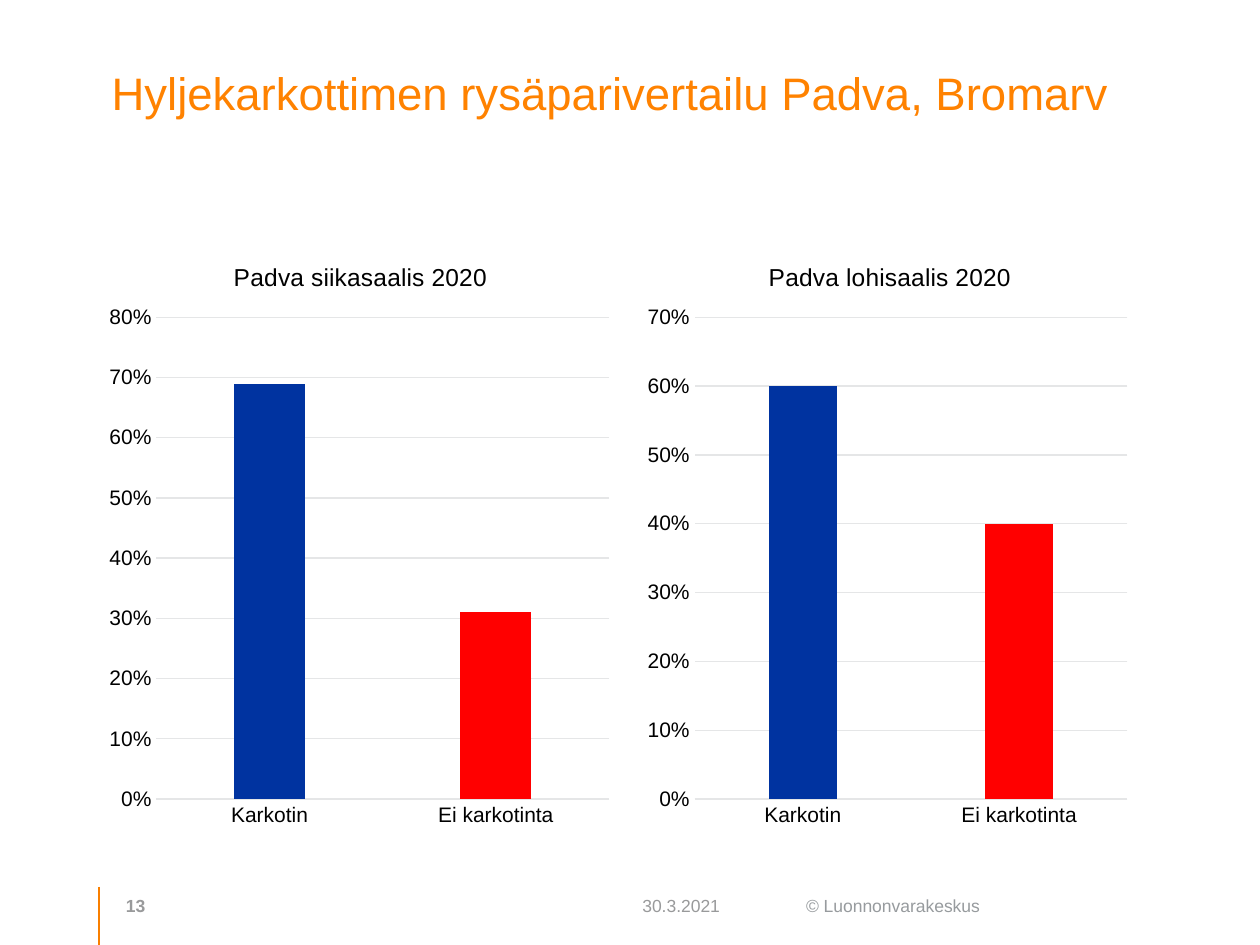
"""Build a slide with two column charts comparing catches with and without a seal deterrent."""
from dataclasses import dataclass

from lxml.etree import SubElement
from pptx import Presentation
from pptx.chart.data import CategoryChartData
from pptx.dml.color import RGBColor
from pptx.enum.chart import XL_CHART_TYPE, XL_TICK_MARK
from pptx.enum.shapes import MSO_CONNECTOR
from pptx.enum.text import MSO_ANCHOR
from pptx.oxml import parse_xml
from pptx.oxml.ns import nsdecls, qn
from pptx.slide import Slide
from pptx.util import Cm, Pt


@dataclass(frozen=True)
class Theme:
    font: str = "Arial"
    orange: str = "FF8200"
    rule: str = "F97F00"
    black: str = "000000"
    gray: str = "999A9B"
    mark: str = "979B9E"
    grid: str = "E5E6E7"
    bars: tuple[str, ...] = ("0033A0", "FF0000")
    head: int = 26
    title: int = 14
    label: int = 12
    foot: int = 10


@dataclass(frozen=True)
class Panel:
    title: str
    left: float
    width: float
    top: float
    shares: tuple[float, ...]


THEME = Theme()
GROUPS = ("Karkotin", "Ei karkotinta")
PANELS = (
    Panel("Padva siikasaalis 2020", 2, 10.49, 0.8, (0.69, 0.31)),
    Panel("Padva lohisaalis 2020", 12.9, 10.03, 0.7, (0.6, 0.4)),
)


def style(font, size: int, color: str, bold: bool = False) -> None:
    font.name, font.size, font.bold = THEME.font, Pt(size), bold
    font.color.rgb = RGBColor.from_string(color)


def write(slide: Slide, text: str, *, box: tuple[float, ...], size: int, color: str,
          bold: bool = False, anchor=MSO_ANCHOR.TOP) -> None:
    frame = slide.shapes.add_textbox(*map(Cm, box)).text_frame
    frame.word_wrap = True
    frame.vertical_anchor = anchor
    run = frame.paragraphs[0].add_run()
    run.text = text
    style(run.font, size, color, bold)


def place(owner, **parts: float) -> None:
    modes = "".join(f'<c:{k}Mode val="edge"/>' for k in "xy")
    sizes = "".join(f'<c:{k} val="{v}"/>' for k, v in parts.items())
    target = '<c:layoutTarget val="inner"/>' if "w" in parts else ""
    layout = parse_xml(f'<c:layout {nsdecls("c")}><c:manualLayout>{target}{modes}{sizes}'
                       '</c:manualLayout></c:layout>')
    for old in owner.findall(qn("c:layout")):
        owner.remove(old)
    text = owner.find(qn("c:tx"))
    owner.insert(0 if text is None else 1, layout)


def stroke(line) -> None:
    line.color.rgb = RGBColor.from_string(THEME.grid)
    line.width = Pt(0.75)


def draw(slide: Slide, panel: Panel) -> None:
    data = CategoryChartData(number_format="0%")
    data.categories = GROUPS
    data.add_series("Osuus", panel.shares)
    chart = slide.shapes.add_chart(
        XL_CHART_TYPE.COLUMN_CLUSTERED, Cm(panel.left), Cm(4.7),
        Cm(panel.width), Cm(12.14), data).chart
    chart.has_legend = False
    style(chart.font, THEME.label, THEME.black)

    title = chart.chart_title
    title.text_frame.text = panel.title
    style(title.text_frame.paragraphs[0].runs[0].font, THEME.title, THEME.black)
    title.include_in_layout = False
    place(title._element, x=0.25, y=0.04)
    place(chart._chartSpace.chart.plotArea, x=0.11, y=0.14, w=0.87, h=0.8)

    for axis in (chart.category_axis, chart.value_axis):
        axis.major_tick_mark = axis.minor_tick_mark = XL_TICK_MARK.NONE
        style(axis.tick_labels.font, THEME.label, THEME.black)
    stroke(chart.category_axis.format.line)
    scale = chart.value_axis
    scale.minimum_scale, scale.maximum_scale, scale.major_unit = 0, panel.top, 0.1
    scale.format.line.fill.background()
    stroke(scale.major_gridlines.format.line)
    scale.tick_labels.number_format = "0%"
    scale.tick_labels.number_format_is_linked = False

    plot = chart.plots[0]
    plot.gap_width, plot.overlap, plot.vary_by_categories = 219, -27, False
    for i, color in enumerate(THEME.bars):
        fill = plot.series[0].points[i].format.fill
        fill.solid()
        fill.fore_color.rgb = RGBColor.from_string(color)


def rule(slide: Slide) -> None:
    line = slide.shapes.add_connector(
        MSO_CONNECTOR.STRAIGHT, Cm(2), Cm(17.88), Cm(2), Cm(19.05))
    line.line.color.rgb = RGBColor.from_string(THEME.rule)
    line.line.width = Pt(1)
    SubElement(line._element.spPr, qn("a:effectLst"))


def main() -> None:
    deck = Presentation()
    deck.slide_width, deck.slide_height = Cm(25.4), Cm(19.05)
    slide = deck.slides.add_slide(deck.slide_layouts[6])
    rule(slide)
    write(slide, "© Luonnonvarakeskus", box=(16, 17.91, 4.93, 0.69),
          size=THEME.foot, color=THEME.mark)
    write(slide, "Hyljekarkottimen rysäparivertailu Padva, Bromarv",
          box=(2, 1.19, 20.96, 2.9), size=THEME.head, color=THEME.orange)
    write(slide, "13", box=(2.29, 17.83, 1.24, 0.76), size=THEME.foot,
          color=THEME.gray, bold=True, anchor=MSO_ANCHOR.BOTTOM)
    write(slide, "30.3.2021", box=(12.7, 17.83, 3.12, 0.76), size=THEME.foot,
          color=THEME.gray, anchor=MSO_ANCHOR.BOTTOM)
    for panel in PANELS:
        draw(slide, panel)
    deck.save("out.pptx")


if __name__ == "__main__":
    main()
